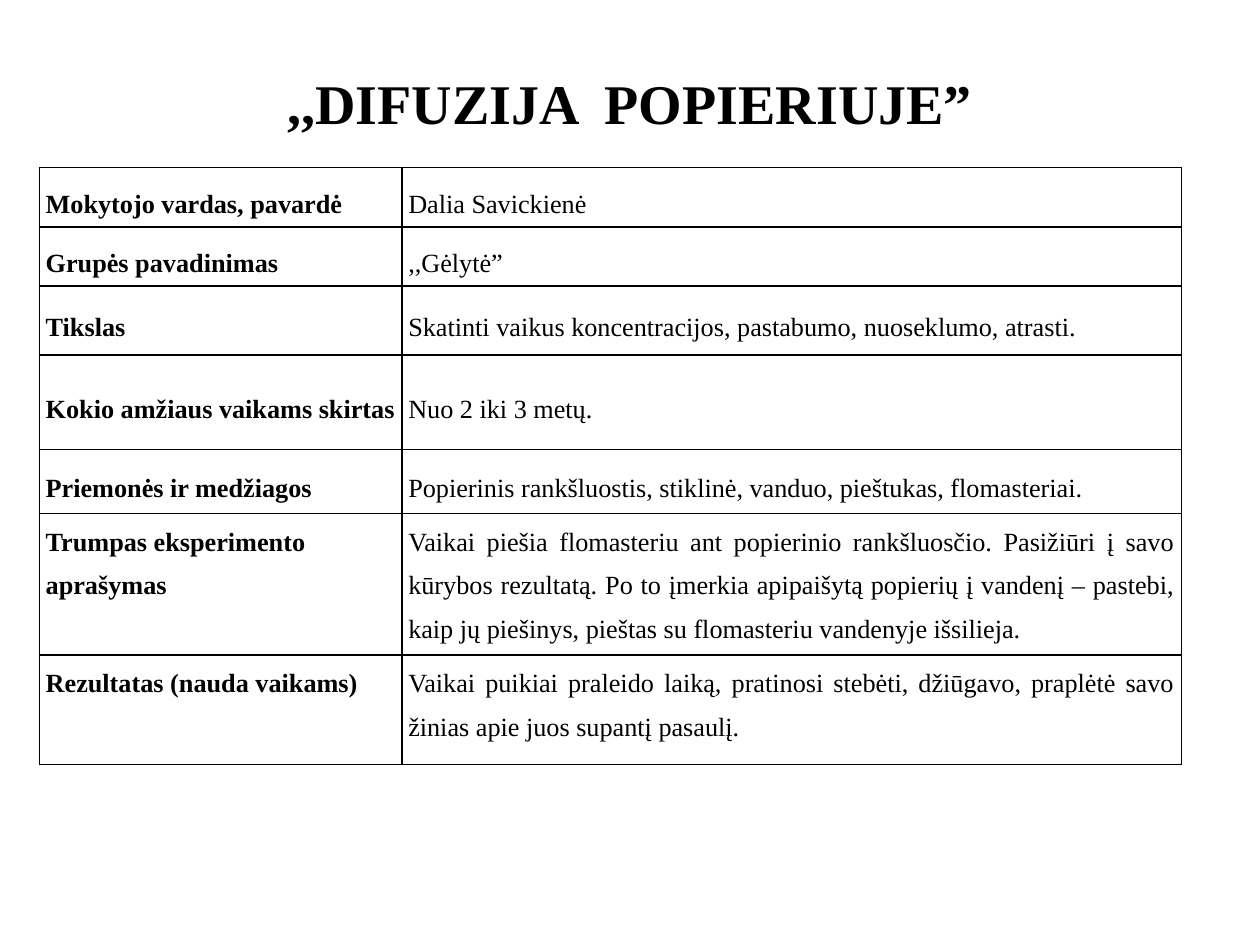
from pptx import Presentation
from pptx.dml.color import RGBColor
from pptx.enum.text import MSO_ANCHOR, PP_ALIGN
from pptx.oxml import parse_xml
from pptx.oxml.ns import nsdecls
from pptx.util import Pt

LEFT, CENTER, JUSTIFY = PP_ALIGN.LEFT, PP_ALIGN.CENTER, PP_ALIGN.JUSTIFY
TOP, MIDDLE = MSO_ANCHOR.TOP, MSO_ANCHOR.MIDDLE
FONT, BLACK = "Times New Roman", "000000"

# Content: label, description, row height, vertical anchor
TITLE = ",,DIFUZIJA  POPIERIUJE”"
ROWS = [
    ("Mokytojo vardas, pavardė", "Dalia Savickienė", 33.8, MIDDLE),
    ("Grupės pavadinimas", ",,Gėlytė”", 33.8, MIDDLE),
    ("Tikslas",
     "Skatinti vaikus koncentracijos, pastabumo, nuoseklumo, atrasti.",
     39.5, MIDDLE),
    ("Kokio amžiaus vaikams skirtas", "Nuo 2 iki 3 metų.", 54, MIDDLE),
    ("Priemonės ir medžiagos",
     "Popierinis rankšluostis, stiklinė, vanduo, pieštukas, flomasteriai.",
     36.5, MIDDLE),
    ("Trumpas eksperimento aprašymas",
     "Vaikai piešia flomasteriu ant popierinio rankšluosčio. Pasižiūri į savo "
     "kūrybos rezultatą. Po to įmerkia apipaišytą popierių į vandenį – pastebi, "
     "kaip jų piešinys, pieštas su flomasteriu vandenyje išsilieja.", 81, TOP),
    ("Rezultatas (nauda vaikams)",
     "Vaikai puikiai praleido laiką, pratinosi stebėti, džiūgavo, praplėtė savo "
     "žinias apie juos supantį pasaulį.", 62.6, TOP),
]
COL_WIDTHS = (207.2, 445.4)


def color(value):
    return RGBColor.from_string(value)


def write(tf, text, size, bold, align):
    tf.word_wrap = True
    tf.text = text
    p = tf.paragraphs[0]
    p.alignment = align
    p.line_spacing = 1.5
    font = p.runs[0].font
    font.name, font.size, font.bold = FONT, Pt(size), bold
    font.color.rgb = color(BLACK)


def add_borders(cell):
    tcPr = cell._tc.get_or_add_tcPr()
    for i, side in enumerate(("lnL", "lnR", "lnT", "lnB")):
        tcPr.insert(i, parse_xml(
            f'<a:{side} {nsdecls("a")} w="{Pt(1)}"><a:solidFill>'
            f'<a:srgbClr val="{BLACK}"/></a:solidFill></a:{side}>'))


prs = Presentation()
prs.slide_width, prs.slide_height = Pt(720), Pt(540)
s = prs.slides.add_slide(prs.slide_layouts[6])

# Table
table = s.shapes.add_table(
    len(ROWS), len(COL_WIDTHS), Pt(22.5), Pt(95.8),
    Pt(sum(COL_WIDTHS)), Pt(sum(row[2] for row in ROWS))).table
table.first_row = table.horz_banding = False
for column, width in zip(table.columns, COL_WIDTHS):
    column.width = Pt(width)

for i, (label, description, height, anchor) in enumerate(ROWS):
    table.rows[i].height = Pt(height)
    for j, (text, align) in enumerate(((label, LEFT), (description, JUSTIFY))):
        cell = table.cell(i, j)
        cell.fill.background()
        cell.vertical_anchor = anchor
        cell.margin_left = cell.margin_right = Pt(3.6)
        cell.margin_top = cell.margin_bottom = Pt(0)
        write(cell.text_frame, text, 15, j == 0, align)
        add_borders(cell)

# Title
title = s.shapes.add_textbox(Pt(0), Pt(16.6), Pt(720), Pt(58.3))
write(title.text_frame, TITLE, 32, True, CENTER)

prs.save("out.pptx")
